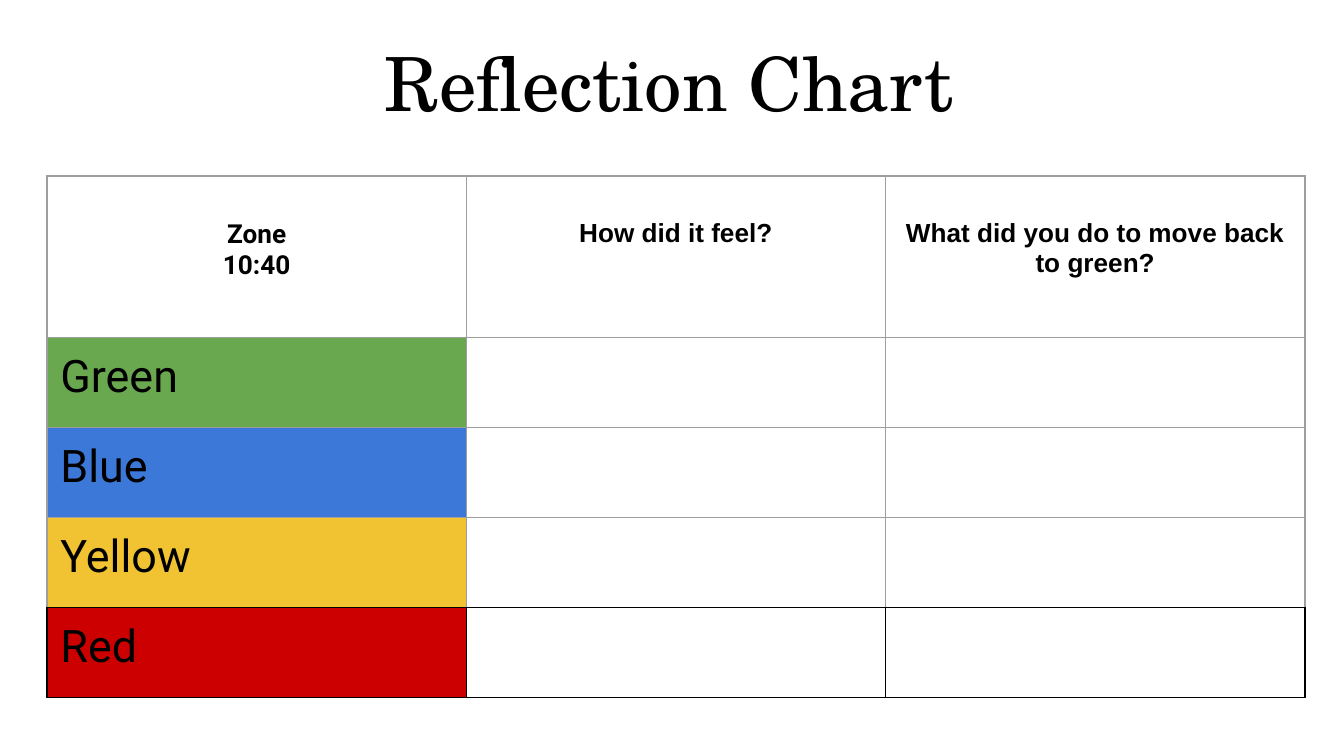
from dataclasses import dataclass

import pptx
import pptx.dml.color
import pptx.enum.text
import pptx.oxml
import pptx.oxml.ns
import pptx.table
import pptx.util
from pptx.util import Inches

COLORS = {
    "white": "FFFFFF",
    "black": "000000",
    "grid": "9E9E9E",
    "green": "6AA84F",
    "blue": "3C78D8",
    "yellow": "F1C232",
    "red": "CC0000",
}
CENTER = pptx.enum.text.PP_ALIGN.CENTER
LEFT = pptx.enum.text.PP_ALIGN.LEFT
SLIDE_WIDTH = 10
SLIDE_HEIGHT = SLIDE_WIDTH * 9 / 16
COLUMN_WIDTH, HEADER_HEIGHT, ZONE_HEIGHT = 3.12, 1.2, 0.67
INSET, HEADER_INSET = 0.1, 0.32


@dataclass(frozen=True)
class Heading:
    text: str
    font: str


@dataclass(frozen=True)
class Zone:
    name: str
    color: str
    top: str = "grid"
    sides: str = "grid"
    bottom: str = "grid"


HEADINGS = [
    Heading("Zone\n10:40", "Roboto"),
    Heading("How did it feel?", "Arial"),
    Heading("What did you do to move back to green?", "Arial"),
]
ZONES = [
    Zone("Green", "green"),
    Zone("Blue", "blue"),
    Zone("Yellow", "yellow", bottom="black"),
    Zone("Red", "red", top="black", sides="black", bottom="black"),
]


def rgb(color: str) -> pptx.dml.color.RGBColor:
    return pptx.dml.color.RGBColor.from_string(COLORS[color])


def write(frame, text: str, font: str, size: float, bold: bool, align) -> None:
    frame.text = text
    for paragraph in frame.paragraphs:
        paragraph.alignment = align
        paragraph.font.name = font
        paragraph.font.size = pptx.util.Pt(size)
        paragraph.font.bold = bold
        paragraph.font.color.rgb = rgb("black")


def style_cell(cell: pptx.table._Cell, fill: str, top: str = "grid",
               sides: str = "grid", bottom: str = "grid") -> None:
    """Set borders before the fill, as the cell's XML order requires."""
    properties = cell._tc.get_or_add_tcPr()
    borders = {"lnL": sides, "lnR": sides, "lnT": top, "lnB": bottom}
    for tag, color in borders.items():
        properties.append(pptx.oxml.parse_xml(
            f'<a:{tag} {pptx.oxml.ns.nsdecls("a")} w="{pptx.util.Pt(0.75)}">'
            f'<a:solidFill><a:srgbClr val="{COLORS[color]}"/></a:solidFill>'
            f'</a:{tag}>'))
    cell.fill.solid()
    cell.fill.fore_color.rgb = rgb(fill)
    cell.margin_left = cell.margin_right = Inches(INSET)
    cell.margin_top = cell.margin_bottom = Inches(INSET)


def add_title(slide) -> None:
    title = slide.shapes.title
    title.left, title.top = Inches(0.24), Inches(0.18)
    title.width, title.height = Inches(9.47), Inches(0.85)
    title.fill.solid()
    title.fill.fore_color.rgb = rgb("white")
    frame = title.text_frame
    frame.margin_left = frame.margin_right = Inches(INSET)
    frame.margin_top = frame.margin_bottom = Inches(INSET)
    frame.vertical_anchor = pptx.enum.text.MSO_ANCHOR.MIDDLE
    frame.auto_size = pptx.enum.text.MSO_AUTO_SIZE.NONE
    write(frame, "Reflection Chart", "TeX Gyre Schola", 40, False, CENTER)


def add_reflection_table(slide) -> None:
    table = slide.shapes.add_table(
        len(ZONES) + 1, len(HEADINGS), Inches(0.35), Inches(1.31),
        Inches(COLUMN_WIDTH * len(HEADINGS)),
        Inches(HEADER_HEIGHT + ZONE_HEIGHT * len(ZONES))).table
    table.first_row = table.horz_banding = False
    for column in table.columns:
        column.width = Inches(COLUMN_WIDTH)
    for index, row in enumerate(table.rows):
        row.height = Inches(ZONE_HEIGHT if index else HEADER_HEIGHT)

    for column, heading in enumerate(HEADINGS):
        cell = table.cell(0, column)
        style_cell(cell, "white")
        cell.margin_top = Inches(HEADER_INSET)
        write(cell.text_frame, heading.text, heading.font, 14, True, CENTER)

    for row, zone in enumerate(ZONES, start=1):
        for column in range(len(HEADINGS)):
            fill = "white" if column else zone.color
            style_cell(table.cell(row, column), fill,
                       zone.top, zone.sides, zone.bottom)
        write(table.cell(row, 0).text_frame, zone.name, "Roboto", 24, False, LEFT)


def main() -> None:
    presentation = pptx.Presentation()
    presentation.slide_width = Inches(SLIDE_WIDTH)
    presentation.slide_height = Inches(SLIDE_HEIGHT)
    slide = presentation.slides.add_slide(
        presentation.slide_layouts.get_by_name("Title Only"))
    add_title(slide)
    add_reflection_table(slide)
    presentation.save("out.pptx")


if __name__ == "__main__":
    main()
